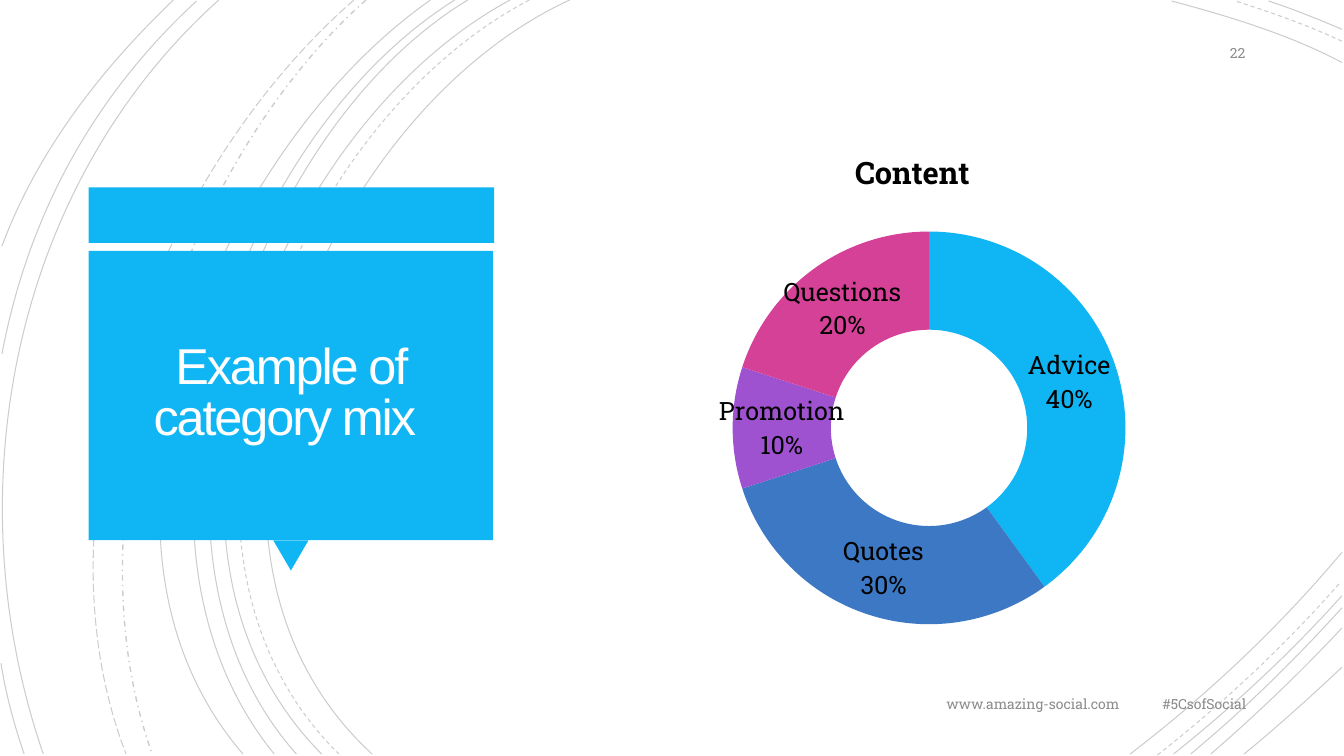
"""Build a slide with a content category doughnut chart."""
from collections import namedtuple

from lxml.etree import SubElement
from pptx import Presentation
from pptx.chart.data import CategoryChartData
from pptx.dml.color import RGBColor
from pptx.enum.chart import XL_CHART_TYPE as ChartType
from pptx.enum.dml import MSO_LINE as Dash
from pptx.enum.shapes import MSO_SHAPE as Shape
from pptx.enum.text import MSO_ANCHOR as Anchor, PP_ALIGN as Align
from pptx.oxml import parse_xml
from pptx.oxml.ns import nsdecls, qn
from pptx.util import Inches, Pt

Theme = namedtuple("Theme", "accent white black grey body heading small label chart_title title")
THEME = Theme("10B6F4", "FFFEFF", "000000", "8C8C8C", "Roboto Slab", "Arial", 10, 18, 22, 36)

TITLE = "Example of category mix "
CHART_TITLE = "Content"
CATEGORIES = [
    ("Advice", 40, THEME.accent),
    ("Quotes", 30, "3C78C3"),
    ("Promotion", 10, "9F52D0"),
    ("Questions", 20, "D64198"),
]
SMALL_TEXTS = [
    ("22", (11.45, 0.35, 1, 0.35)),
    ("www.amazing-social.com", (8.2, 6.81, 3, 0.35)),
    ("#5CsofSocial", (11.26, 6.81, 1.2, 0.35)),
]
PANELS = [
    (Shape.RECTANGLE, (0.88, 1.86, 4.02, 0.55), 0),
    (Shape.ISOSCELES_TRIANGLE, (2.71, 5.36, 0.35, 0.3), 180),
    (Shape.RECTANGLE, (0.88, 2.49, 4.01, 2.87), 0),
]
TITLE_BOX = (0.97, 2.57, 3.83, 2.69)
CHART_BOX = (5.36, 1.21, 8.29, 5.47)
CURVES = {
    (Dash.SOLID, 0.75): [
        ((5.65, 0), (3.15, 1.15), (1.43, 5.4), (3.69, 7.48)),
        ((5.06, 0), (2.7, 1.27), (1.1, 5.37), (3.19, 7.48)),
        ((4.64, 0), (2.44, 1.33), (1.1, 5.41), (2.94, 7.48)),
        ((4.51, 0), (2.31, 1.38), (0.97, 5.33), (2.72, 7.48)),
        ((4.27, 0), (2.17, 1.47), (0.53, 5.29), (2.41, 7.48)),
        ((2.17, 0), (0.11, 1.85), (-0.46, 4.9), (0.43, 7.48)),
        ((1.95, 0.01), (0.92, 0.96), (0.28, 2.14), (0.02, 3.51)),
        ((0.01, 6.58), (0.06, 6.89), (0.14, 7.19), (0.24, 7.48)),
        ((1.72, 0), (1, 0.69), (0.37, 1.5), (0.02, 2.44)),
        ((13.31, 0.62), (12.78, 0.34), (12.18, 0.16), (11.62, 0.01)),
        ((13.31, 0.29), (13.07, 0.19), (12.83, 0.09), (12.58, 0.01)),
        ((11.21, 7.48), (11.97, 6.9), (12.69, 6.22), (13.31, 5.48)),
        ((11.64, 7.48), (12.23, 7.01), (12.8, 6.48), (13.31, 5.91)),
        ((11.81, 7.48), (12.34, 7.04), (12.84, 6.55), (13.31, 6.03)),
        ((12.01, 7.48), (12.46, 7.09), (12.9, 6.67), (13.31, 6.23)),
        ((12.34, 7.48), (12.67, 7.21), (12.99, 6.92), (13.31, 6.62)),
    ],
    (Dash.DASH, 0.75): [
        ((5.25, 0), (2.85, 1.25), (1.23, 5.37), (3.36, 7.48)),
        ((13.31, 0.41), (12.97, 0.25), (12.6, 0.12), (12.25, 0.01)),
        ((11.48, 7.49), (12.13, 6.98), (12.75, 6.4), (13.3, 5.77)),
    ],
    (Dash.DASH_DOT, 1): [((3.63, 0), (1.76, 1.66), (0.65, 5.09), (1.51, 7.48))],
    (Dash.LONG_DASH, 0.75): [((3.51, 0), (1.57, 1.69), (0.29, 4.99), (1.25, 7.48))],
}


def inches(values):
    return [Inches(value) for value in values]


def style_font(font, size, color, name):
    font.size, font.name = Pt(size), name
    font.color.rgb = RGBColor.from_string(color)


def add_curve(page, curve, dash, width):
    start, *controls = [inches(point) for point in curve]
    builder = page.shapes.build_freeform(*start)
    builder.add_line_segments(controls, close=False)
    arc = builder.convert_to_shape()
    outline = arc._element.find(".//" + qn("a:path"))
    bezier = SubElement(outline, qn("a:cubicBezTo"))
    for segment in outline.findall(qn("a:lnTo")):
        bezier.append(segment[0])
        outline.remove(segment)
    arc.shadow.inherit = False
    arc.fill.background()
    arc.line.width, arc.line.dash_style = Pt(width), dash
    arc.line.color.rgb = RGBColor.from_string(THEME.black)
    color = arc._element.spPr.find(qn("a:ln")).find(".//" + qn("a:srgbClr"))
    SubElement(color, qn("a:alpha"), val="20000")


def add_panel(page, kind, place, rotation):
    panel = page.shapes.add_shape(kind, *inches(place))
    panel.rotation = rotation
    panel.shadow.inherit = False
    panel.fill.solid()
    panel.fill.fore_color.rgb = RGBColor.from_string(THEME.accent)
    panel.line.fill.background()


def add_text(page, text, place, align, *font_style):
    box = page.shapes.add_textbox(*inches(place))
    frame = box.text_frame
    frame.word_wrap, frame.vertical_anchor = True, Anchor.MIDDLE
    para = frame.paragraphs[0]
    para.text, para.alignment = text, align
    style_font(para.runs[0].font, *font_style)
    return frame


def add_title(page):
    frame = add_text(page, TITLE, TITLE_BOX, Align.CENTER, THEME.title, THEME.white, THEME.heading)
    frame.margin_left = frame.margin_right = frame.margin_top = frame.margin_bottom = Inches(0.25)
    para = frame.paragraphs[0]
    para.line_spacing = 0.85
    para.runs[0]._r.get_or_add_rPr().set("spc", "-150")


def set_layout(parent, index, **settings):
    for old in parent.findall(qn("c:layout")):
        parent.remove(old)
    layout = parse_xml(f"<c:layout {nsdecls('c')}><c:manualLayout/></c:layout>")
    for name, value in settings.items():
        SubElement(layout[0], qn(f"c:{name}"), val=str(value))
    parent.insert(index, layout)


def add_doughnut(page):
    names, values, colors = zip(*CATEGORIES)
    data = CategoryChartData()
    data.categories = names
    data.add_series(CHART_TITLE, values)
    chart = page.shapes.add_chart(ChartType.DOUGHNUT, *inches(CHART_BOX), data).chart
    chart.has_legend = False
    style_font(chart.font, THEME.label, THEME.black, THEME.body)
    chart.has_title = True
    heading = chart.chart_title
    heading.text_frame.text = CHART_TITLE
    font = heading.text_frame.paragraphs[0].runs[0].font
    style_font(font, THEME.chart_title, THEME.black, THEME.body)
    font.bold = True
    set_layout(heading._element, 1, xMode="edge", yMode="edge", x=0.37, y=0.04)
    set_layout(chart._chartSpace.chart.plotArea, 0, layoutTarget="inner", xMode="edge",
               yMode="edge", x=0.23, y=0.11, w=0.47, h=0.89)
    series = chart.plots[0].series[0]
    for index, color in enumerate(colors):
        fill = series.points[index].format.fill
        fill.solid()
        fill.fore_color.rgb = RGBColor.from_string(color)
    labels = series.data_labels
    labels.show_value = False
    labels.show_category_name = labels.show_percentage = True
    labels.number_format, labels.number_format_is_linked = "0%", False
    style_font(labels.font, THEME.label, THEME.black, THEME.body)
    separator = parse_xml(f"<c:separator {nsdecls('c')}>\n</c:separator>")
    labels._element.find(qn("c:showBubbleSize")).addnext(separator)


def main():
    deck = Presentation()
    deck.slide_width, deck.slide_height = inches((13.33, 7.5))
    page = deck.slides.add_slide(deck.slide_layouts[6])
    for (dash, width), curves in CURVES.items():
        for curve in curves:
            add_curve(page, curve, dash, width)
    for panel in PANELS:
        add_panel(page, *panel)
    add_title(page)
    add_doughnut(page)
    for text, place in SMALL_TEXTS:
        add_text(page, text, place, Align.RIGHT, THEME.small, THEME.grey, THEME.body)
    deck.save("out.pptx")


if __name__ == "__main__":
    main()
